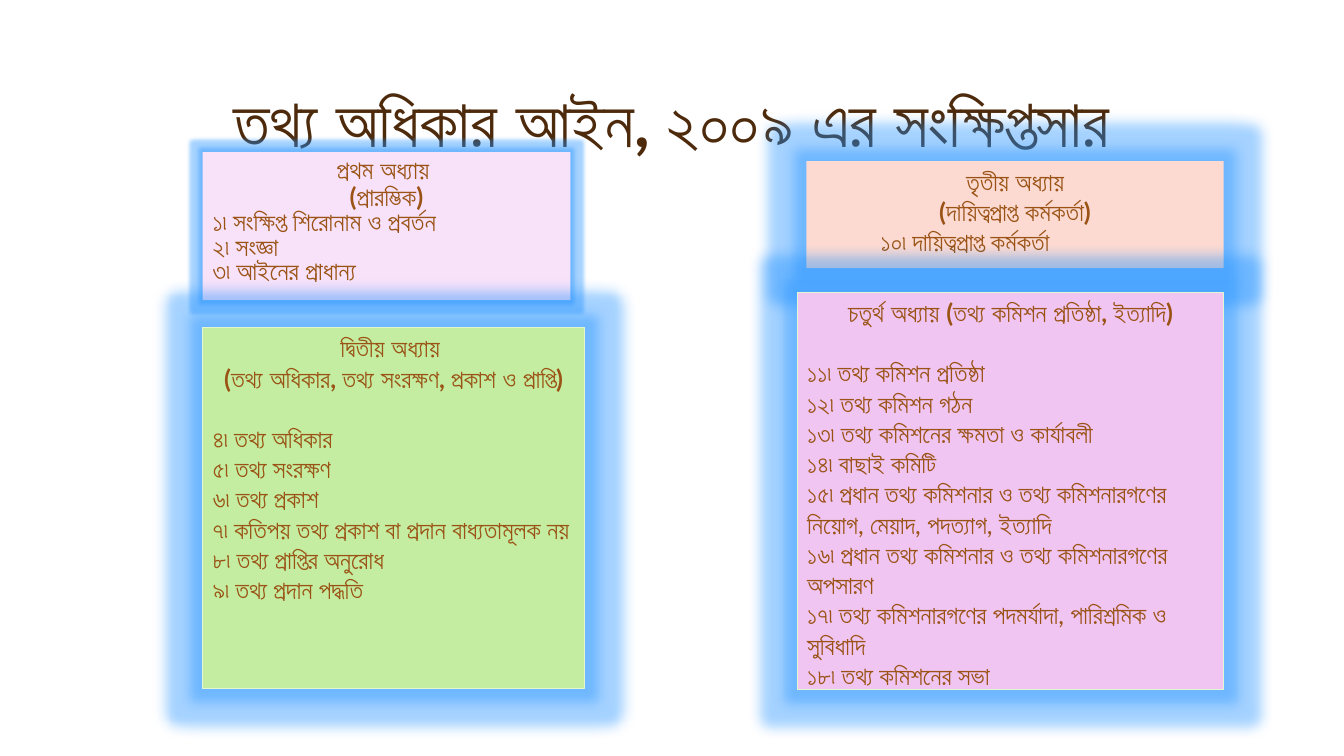
"""Build a one-slide summary of the Right to Information Act, 2009."""
from lxml import etree
from pptx import Presentation
from pptx.dml.color import RGBColor
from pptx.enum import shapes, text
from pptx.oxml import ns
from pptx.util import Pt

TITLE = "তথ্য অধিকার আইন, ২০০৯ এর সংক্ষিপ্তসার"
CARDS = [
    dict(box=(144.7, 108.7, 262.8, 105.8), fill="F8E2F9", line=None, glow=6,
         size=18.2, lead=(0.9, 0.8), gap=0, left=0,
         heads=["প্রথম অধ্যায় ", "(প্রারম্ভিক)"],
         items=["১৷ সংক্ষিপ্ত শিরোনাম ও প্রবর্তন", "২৷ সংজ্ঞা", "৩৷ আইনের প্রাধান্য"]),
    dict(box=(144.7, 234, 272.9, 257.8), fill="C4EDA1", line="E2F6D0", glow=18,
         size=18, lead=(1.0, 1.0), gap=21.6, left=0,
         heads=["দ্বিতীয় অধ্যায় ", "(তথ্য অধিকার, তথ্য সংরক্ষণ, প্রকাশ ও প্রাপ্তি)"],
         items=["৪৷ তথ্য অধিকার", "৫৷ তথ্য সংরক্ষণ", "৬৷ তথ্য প্রকাশ",
                "৭৷ কতিপয় তথ্য প্রকাশ বা প্রদান বাধ্যতামূলক নয়",
                "৮৷ তথ্য প্রাপ্তির অনুরোধ", "৯৷ তথ্য প্রদান পদ্ধতি"]),
    dict(box=(576, 115.2, 298.1, 76.3), fill="FCDAD2", line=None, glow=18,
         size=18, lead=(1.0, 1.0), gap=0, left=46,
         heads=["তৃতীয় অধ্যায়", "(দায়িত্বপ্রাপ্ত কর্মকর্তা)"],
         items=["১০৷ দায়িত্বপ্রাপ্ত কর্মকর্তা"]),
    dict(box=(569.5, 208.8, 304.6, 283.7), fill="F0C5F2", line="E2F6D0", glow=18,
         size=18, lead=(1.0, 1.0), gap=21.6, left=0,
         heads=["চতুর্থ অধ্যায় (তথ্য কমিশন প্রতিষ্ঠা, ইত্যাদি)"],
         items=["১১৷ তথ্য কমিশন প্রতিষ্ঠা", "১২৷ তথ্য কমিশন গঠন",
                "১৩৷ তথ্য কমিশনের ক্ষমতা ও কার্যাবলী", "১৪৷ বাছাই কমিটি",
                "১৫৷ প্রধান তথ্য কমিশনার ও তথ্য কমিশনারগণের নিয়োগ, মেয়াদ, পদত্যাগ, ইত্যাদি",
                "১৬৷ প্রধান তথ্য কমিশনার ও তথ্য কমিশনারগণের অপসারণ",
                "১৭৷ তথ্য কমিশনারগণের পদমর্যাদা, পারিশ্রমিক ও সুবিধাদি",
                "১৮৷ তথ্য কমিশনের সভা"]),
]
FONT, INK, BROWN, GLOW = "Lato", "4D2A0B", "9A5315", "1E90FF"
ALIGN = text.PP_ALIGN


def rgb(code):
    return RGBColor.from_string(code)


def apply(obj, form):
    for key, val in form.items():
        setattr(obj, key, val)


def write(para, words, size, color, bold, form):
    para.text = words
    apply(para, form)
    apply(para.font, dict(name=FONT, size=Pt(size), bold=bold))
    para.font.color.rgb = rgb(color)


def shine(shape, size):
    shape.shadow.inherit = False
    effect = shape._element.spPr.find(ns.qn("a:effectLst"))
    glow = etree.SubElement(effect, ns.qn("a:glow"), rad=str(Pt(size)))
    color = etree.SubElement(glow, ns.qn("a:srgbClr"), val=GLOW)
    etree.SubElement(color, ns.qn("a:alpha"), val="40000")


def card(slide, data):
    shape = slide.shapes.add_shape(shapes.MSO_SHAPE.RECTANGLE, *map(Pt, data["box"]))
    shape.fill.solid()
    shape.fill.fore_color.rgb = rgb(data["fill"])
    if data["line"]:
        shape.line.color.rgb = rgb(data["line"])
        shape.line.width = Pt(0.75)
    else:
        shape.line.fill.background()
    shine(shape, data["glow"])
    frame = shape.text_frame
    apply(frame, dict(word_wrap=True, vertical_anchor=text.MSO_ANCHOR.TOP))
    heads = data["heads"]
    for num, words in enumerate(heads + data["items"]):
        para = frame.add_paragraph() if num else frame.paragraphs[0]
        head = num < len(heads)
        gap = data["gap"] if num == len(heads) else 0
        if not head and data["left"]:
            para._p.get_or_add_pPr().set("marL", str(Pt(data["left"])))
        form = dict(alignment=ALIGN.CENTER if head else ALIGN.LEFT,
                    line_spacing=data["lead"][0 if head else 1])
        if gap:
            form["space_before"] = Pt(gap)
        write(para, words, data["size"], BROWN, head, form)


def main():
    deck = Presentation()
    apply(deck, dict(slide_width=Pt(960), slide_height=Pt(540)))
    slide = deck.slides.add_slide(deck.slide_layouts[5])
    title = slide.shapes.title
    apply(title, dict(left=Pt(83.5), top=Pt(23.8), width=Pt(792), height=Pt(95.8)))
    apply(title.text_frame, dict(vertical_anchor=text.MSO_ANCHOR.BOTTOM, word_wrap=True,
                                 auto_size=text.MSO_AUTO_SIZE.NONE))
    write(title.text_frame.paragraphs[0], TITLE, 48, INK, True,
          dict(alignment=ALIGN.CENTER, line_spacing=0.9))
    for data in CARDS:
        card(slide, data)
    deck.save("out.pptx")


if __name__ == "__main__":
    main()
